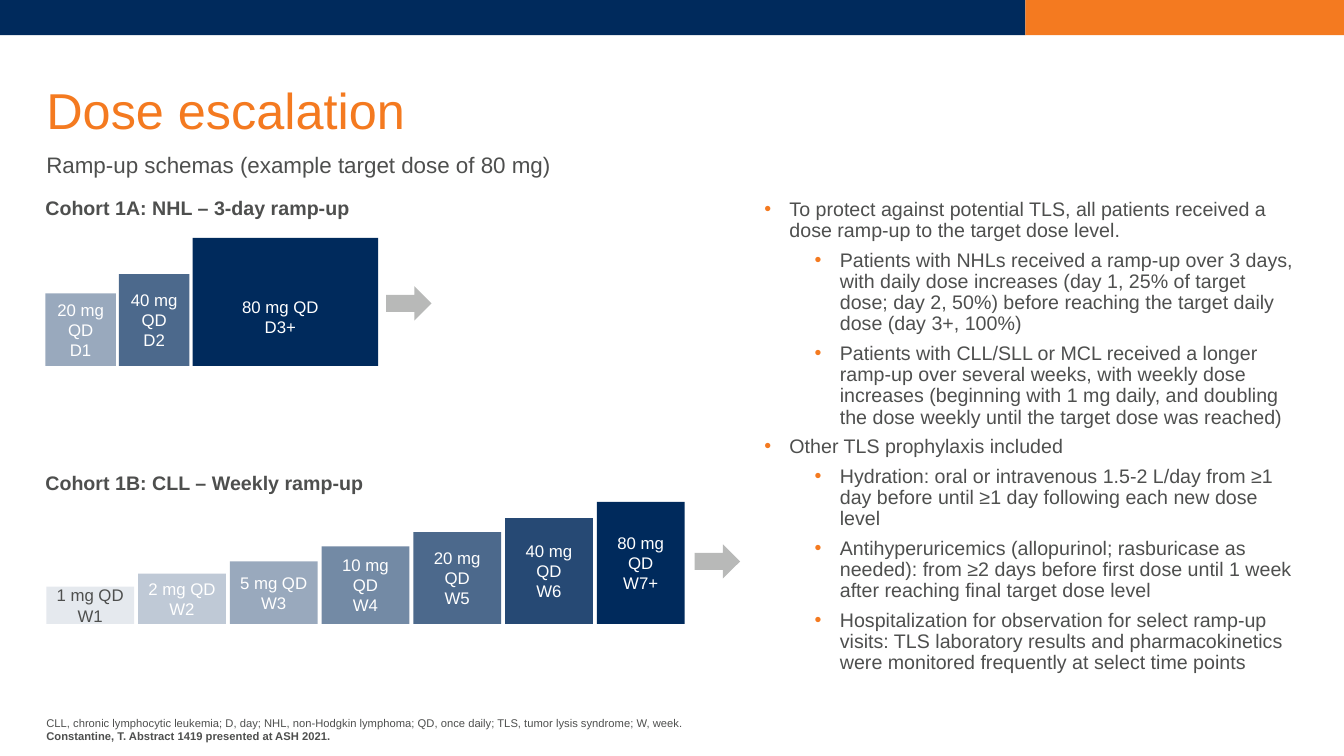
import pptx
import pptx.util
import pptx.dml.color
import pptx.enum.shapes
import pptx.enum.text
import pptx.oxml.ns
import lxml.etree

Inches = pptx.util.Inches
Pt = pptx.util.Pt
RGBColor = pptx.dml.color.RGBColor
SHAPE = pptx.enum.shapes.MSO_SHAPE
ALIGN = pptx.enum.text.PP_ALIGN
ANCHOR = pptx.enum.text.MSO_ANCHOR
qn = pptx.oxml.ns.qn

NAVY = RGBColor(0x00, 0x2A, 0x5C)
ORANGE = RGBColor(0xF4, 0x7A, 0x20)
TEXT_GRAY = RGBColor(0x4E, 0x4F, 0x4E)
ARROW_GRAY = RGBColor(0xB8, 0xB9, 0xB8)
WHITE = RGBColor(0xFF, 0xFF, 0xFF)

# Bars: dose, period, height in inches, opacity in percent
DAILY_BARS = [
    ("20 mg QD", "D1", 0.72, 40),
    ("40 mg QD", "D2", 0.91, 70),
]
WEEKLY_BARS = [
    ("1 mg QD", "W1", 0.37, 10),
    ("2 mg QD", "W2", 0.5, 25),
    ("5 mg QD", "W3", 0.62, 40),
    ("10 mg QD", "W4", 0.77, 55),
    ("20 mg QD", "W5", 0.91, 70),
    ("40 mg QD", "W6", 1.05, 85),
    ("80 mg QD", "W7+", 1.21, 100),
]

# Bullets: level, text
BULLETS = [
    (0, "To protect against potential TLS, all patients received a dose ramp-up to the target dose level."),
    (1, "Patients with NHLs received a ramp-up over 3 days, with daily dose increases (day 1, 25% of "
        "target dose; day 2, 50%) before reaching the target daily dose (day 3+, 100%)"),
    (1, "Patients with CLL/SLL or MCL received a longer ramp-up over several weeks, with weekly dose "
        "increases (beginning with 1 mg daily, and doubling the dose weekly until the target dose was "
        "reached)"),
    (0, "Other TLS prophylaxis included"),
    (1, "Hydration: oral or intravenous 1.5-2 L/day from ≥1 day before until ≥1 day following each new "
        "dose level"),
    (1, "Antihyperuricemics (allopurinol; rasburicase as needed): from ≥2 days before first dose until "
        "1 week after reaching final target dose level"),
    (1, "Hospitalization for observation for select ramp-up visits: TLS laboratory results and "
        "pharmacokinetics were monitored frequently at select time points"),
]


def style_font(paragraph, size, color, bold=False):
    font = paragraph.font
    font.name = "Arial"
    font.size = Pt(size)
    font.bold = bold
    font.color.rgb = color


def set_margins(frame, horizontal, vertical):
    frame.margin_left = frame.margin_right = Inches(horizontal)
    frame.margin_top = frame.margin_bottom = Inches(vertical)


def write_lines(frame, lines, size, color, bold=False, align=ALIGN.LEFT, spacing=None):
    for index, line in enumerate(lines):
        paragraph = frame.paragraphs[0] if index == 0 else frame.add_paragraph()
        paragraph.text = line
        paragraph.alignment = align
        paragraph.line_spacing = spacing
        style_font(paragraph, size, color, bold)


def add_text(slide, left, top, width, height, lines, size, color, anchor=ANCHOR.TOP, **style):
    box = slide.shapes.add_textbox(Inches(left), Inches(top), Inches(width), Inches(height))
    frame = box.text_frame
    frame.word_wrap = True
    frame.vertical_anchor = anchor
    set_margins(frame, 0, 0)
    write_lines(frame, lines, size, color, **style)
    return frame


def add_block(slide, kind, left, top, width, height, color, opacity=100):
    shape = slide.shapes.add_shape(kind, Inches(left), Inches(top), Inches(width), Inches(height))
    shape.shadow.inherit = False
    shape.line.fill.background()
    shape.fill.solid()
    shape.fill.fore_color.rgb = color
    if opacity < 100:
        color_element = shape.fill._xPr.find(qn("a:solidFill"))[0]
        lxml.etree.SubElement(color_element, qn("a:alpha"), val=str(opacity * 1000))
    return shape


def add_bars(slide, bars, left, bottom, width, step):
    for index, (dose, period, height, opacity) in enumerate(bars):
        bar = add_block(slide, SHAPE.RECTANGLE, left + index * step, bottom - height,
                        width, height, NAVY, opacity)
        frame = bar.text_frame
        frame.word_wrap = True
        frame.vertical_anchor = ANCHOR.MIDDLE
        set_margins(frame, 0.04 if opacity == 10 else 0.08 if opacity == 25 else 0.1, 0.05)
        color = TEXT_GRAY if opacity == 10 else WHITE
        write_lines(frame, [dose, period], 12, color, align=ALIGN.CENTER)


def add_arrow(slide, left, top):
    add_block(slide, SHAPE.RIGHT_ARROW, left, top, 0.45, 0.34, ARROW_GRAY)


def add_bullet(paragraph, level):
    paragraph.level = level
    properties = paragraph._p.get_or_add_pPr()
    properties.set("marL", str(Inches(0.25 + 0.5 * level)))
    properties.set("indent", str(Inches(-0.25)))
    bullet_color = lxml.etree.SubElement(properties, qn("a:buClr"))
    lxml.etree.SubElement(bullet_color, qn("a:srgbClr"), val=str(ORANGE))
    lxml.etree.SubElement(properties, qn("a:buFont"), typeface="Arial")
    lxml.etree.SubElement(properties, qn("a:buChar"), char="•")


def add_bullet_list(slide):
    frame = add_text(slide, 7.58, 1.98, 5.31, 4.8, [], 14, TEXT_GRAY)
    for index, (level, text) in enumerate(BULLETS):
        paragraph = frame.paragraphs[0] if index == 0 else frame.add_paragraph()
        paragraph.text = text
        add_bullet(paragraph, level)
        paragraph.line_spacing = 0.9
        paragraph.space_before = Pt(6 if index else 0)
        style_font(paragraph, 14, TEXT_GRAY)


def main():
    presentation = pptx.Presentation()
    presentation.slide_width = Inches(13.33)
    presentation.slide_height = Inches(7.5)
    slide = presentation.slides.add_slide(presentation.slide_layouts[6])

    # Top band
    add_block(slide, SHAPE.RECTANGLE, 0, 0, 10.17, 0.35, NAVY)
    add_block(slide, SHAPE.RECTANGLE, 10.17, 0, 3.16, 0.35, ORANGE)

    # Title and subtitle
    add_text(slide, 0.46, 0.41, 12.43, 0.98, ["Dose escalation"], 36, ORANGE,
             anchor=ANCHOR.BOTTOM, spacing=0.9)
    subtitle = add_text(slide, 0.46, 1.27, 12.42, 0.71,
                        ["Ramp-up schemas (example target dose of 80 mg)"], 16, TEXT_GRAY,
                        anchor=ANCHOR.MIDDLE, spacing=0.9)
    subtitle.margin_top = Inches(0.04)

    # Cohort 1A: daily ramp-up
    add_text(slide, 0.45, 1.94, 6.61, 0.24, ["Cohort 1A: NHL – 3-day ramp-up"], 14, TEXT_GRAY, bold=True)
    add_bars(slide, DAILY_BARS, 0.45, 3.63, 0.7, 0.73)
    add_block(slide, SHAPE.RECTANGLE, 1.91, 2.36, 1.84, 1.27, NAVY)
    add_text(slide, 2.27, 2.94, 1.02, 0.4, ["80 mg QD", "D3+"], 12, WHITE, align=ALIGN.CENTER)
    add_arrow(slide, 3.83, 2.84)

    # Cohort 1B: weekly ramp-up
    add_text(slide, 0.45, 4.67, 6.58, 0.24, ["Cohort 1B: CLL – Weekly ramp-up"], 14, TEXT_GRAY, bold=True)
    add_bars(slide, WEEKLY_BARS, 0.46, 6.19, 0.87, 0.91)
    add_arrow(slide, 6.89, 5.4)

    # Explanation
    add_bullet_list(slide)

    # Footnotes
    footnotes = add_text(slide, 0.46, 6.95, 9.37, 0.42, [
        "CLL, chronic lymphocytic leukemia; D, day; NHL, non‑Hodgkin lymphoma; QD, once daily; "
        "TLS, tumor lysis syndrome; W, week.",
        "Constantine, T. Abstract 1419 presented at ASH 2021.",
    ], 8, TEXT_GRAY, anchor=ANCHOR.BOTTOM)
    footnotes.paragraphs[1].font.bold = True

    presentation.save("out.pptx")


if __name__ == "__main__":
    main()
